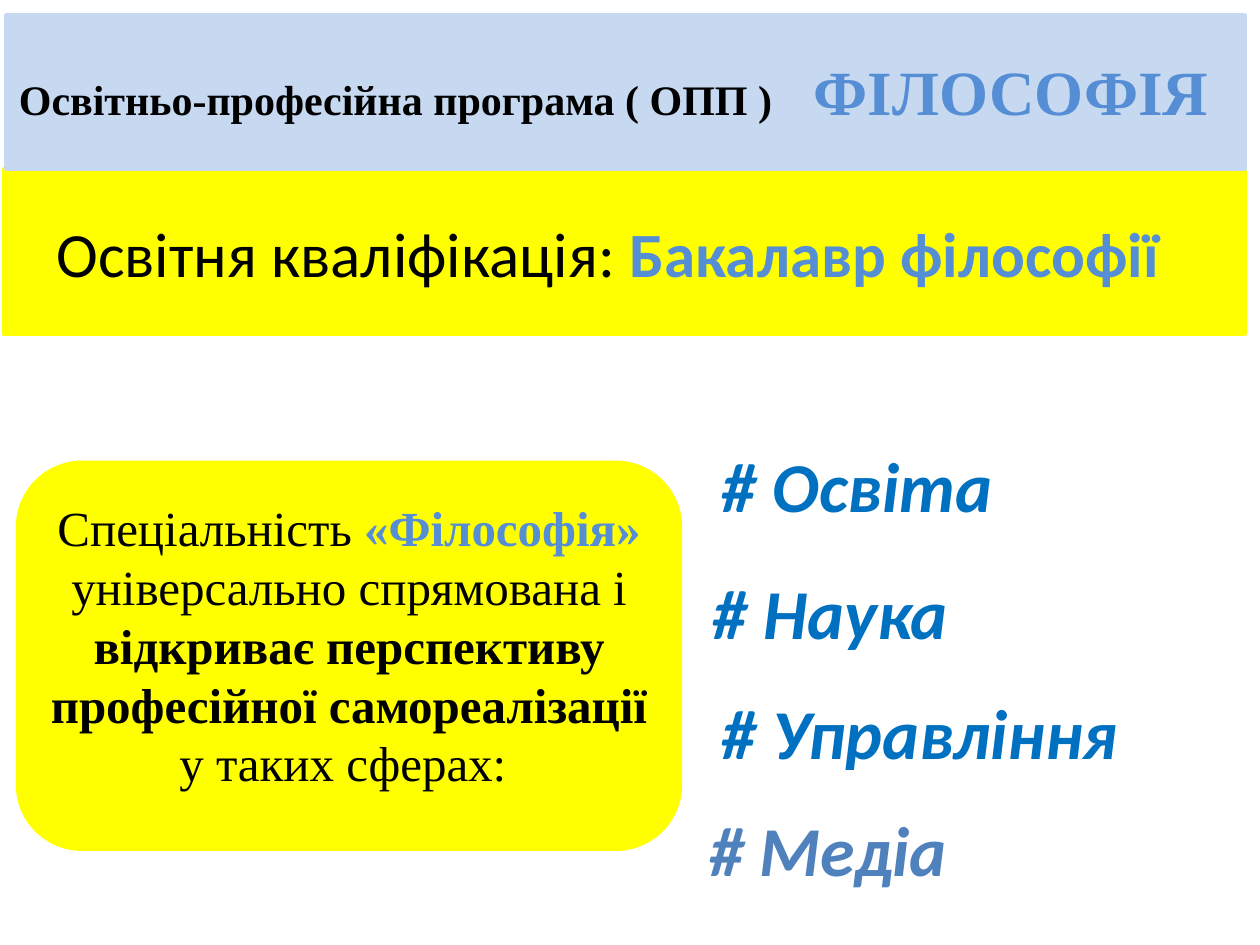
"""Build the slide presenting the Philosophy educational programme."""
from dataclasses import dataclass

from lxml.etree import SubElement
from pptx import Presentation
from pptx.dml.color import RGBColor
from pptx.enum.shapes import MSO_SHAPE as Preset
from pptx.enum.text import MSO_ANCHOR as Anchor, MSO_AUTO_SIZE as AutoSize, PP_ALIGN as Align
from pptx.oxml.ns import qn
from pptx.util import Inches, Pt

COLORS = {
    "yellow": "FFFF00",
    "pale": "C6D9F1",
    "black": "000000",
    "accent": "558ED5",
    "blue": "0070C0",
    "steel": "4F81BD",
}
SERIF, SANS = "Times New Roman", "Calibri"


@dataclass(frozen=True)
class Box:
    left: float
    top: float
    width: float
    height: float

    def emu(self) -> tuple:
        return tuple(map(Inches, (self.left, self.top, self.width, self.height)))


@dataclass(frozen=True)
class Panel:
    box: Box
    color: str
    preset: int = Preset.RECTANGLE


@dataclass(frozen=True)
class Span:
    text: str
    size: int
    face: str
    color: str = "black"
    bold: bool = False
    italic: bool = False


@dataclass(frozen=True)
class Label:
    box: Box
    spans: tuple
    wrap: bool = False
    align: int = Align.LEFT


@dataclass(frozen=True)
class Field:
    name: str
    box: Box
    color: str = "blue"
    wrap: bool = False

    def label(self) -> Label:
        return Label(self.box, (Span(f"# {self.name}", 40, SANS, self.color, True, True),), self.wrap)


PANELS = (
    Panel(Box(0.03, 1.34, 9.85, 1.31), "yellow"),
    Panel(Box(0.05, 0.12, 9.83, 1.22), "pale"),
    Panel(Box(0.14, 3.67, 5.26, 3.07), "yellow", Preset.ROUNDED_RECTANGLE),
)
PROGRAMME = Label(
    Box(0.05, 0.37, 9.69, 0.71),
    (
        Span("Освітньо-професійна програма ( ОПП )\t", 24, SERIF, bold=True),
        Span("ФІЛОСОФІЯ", 36, SERIF, "accent", True),
    ),
    wrap=True,
)
PROGRAMME_TAB = 6.31
QUALIFICATION = Label(
    Box(0.35, 1.65, 9.17, 0.71),
    (
        Span("Освітня кваліфікація: ", 36, SANS),
        Span("Бакалавр філософії", 36, SANS, "accent", True),
    ),
)
SPECIALITY = Label(
    Box(0.21, 3.9, 5.12, 2.46),
    (
        Span("Спеціальність ", 28, SERIF),
        Span("«Філософія» ", 28, SERIF, "accent", True),
        Span("універсально спрямована і ", 28, SERIF),
        Span("відкриває перспективу професійної самореалізації ", 28, SERIF, bold=True),
        Span("у таких сферах: ", 28, SERIF),
    ),
    wrap=True,
    align=Align.CENTER,
)
FIELDS = (
    Field("Освіта", Box(5.63, 3.46, 2.38, 0.77)),
    Field("Наука", Box(5.56, 4.47, 2.08, 0.77)),
    Field("Управління", Box(5.63, 5.42, 3.38, 0.77)),
    Field("Медіа", Box(5.53, 6.35, 4.35, 0.77), "steel", True),
)


def rgb(color: str) -> RGBColor:
    return RGBColor.from_string(COLORS[color])


def apply(target, values: dict) -> None:
    for attribute, value in values.items():
        setattr(target, attribute, value)


def draw_panel(slide, panel: Panel) -> None:
    shape = slide.shapes.add_shape(panel.preset, *panel.box.emu())
    shape.shadow.inherit = False
    shape.fill.solid()
    shape.fill.fore_color.rgb = rgb(panel.color)
    shape.line.color.rgb = rgb(panel.color)
    shape.line.width = Pt(2)


def write_label(shape, label: Label) -> None:
    apply(shape, dict(zip(("left", "top", "width", "height"), label.box.emu())))
    frame = shape.text_frame
    apply(frame, {
        "word_wrap": label.wrap,
        "auto_size": AutoSize.SHAPE_TO_FIT_TEXT,
        "vertical_anchor": Anchor.TOP,
    })
    paragraph = frame.paragraphs[0]
    paragraph.alignment = label.align
    for span in label.spans:
        run = paragraph.add_run()
        run.text = span.text
        apply(run.font, {
            "name": span.face,
            "size": Pt(span.size),
            "bold": span.bold,
            "italic": span.italic,
        })
        run.font.color.rgb = rgb(span.color)


def add_tab_stop(shape, position: float) -> None:
    properties = shape.text_frame.paragraphs[0]._p.get_or_add_pPr()
    stops = SubElement(properties, qn("a:tabLst"))
    SubElement(stops, qn("a:tab"), pos=str(Inches(position)), algn="l")


def main() -> None:
    deck = Presentation()
    deck.slide_width, deck.slide_height = Inches(10), Inches(7.5)
    slide = deck.slides.add_slide(deck.slide_layouts[5])
    for panel in PANELS:
        draw_panel(slide, panel)

    title = slide.shapes.title
    title.element.getparent().append(title.element)
    write_label(title, PROGRAMME)
    add_tab_stop(title, PROGRAMME_TAB)

    for label in (QUALIFICATION, SPECIALITY, *(field.label() for field in FIELDS)):
        write_label(slide.shapes.add_textbox(*label.box.emu()), label)
    deck.save("out.pptx")


if __name__ == "__main__":
    main()
